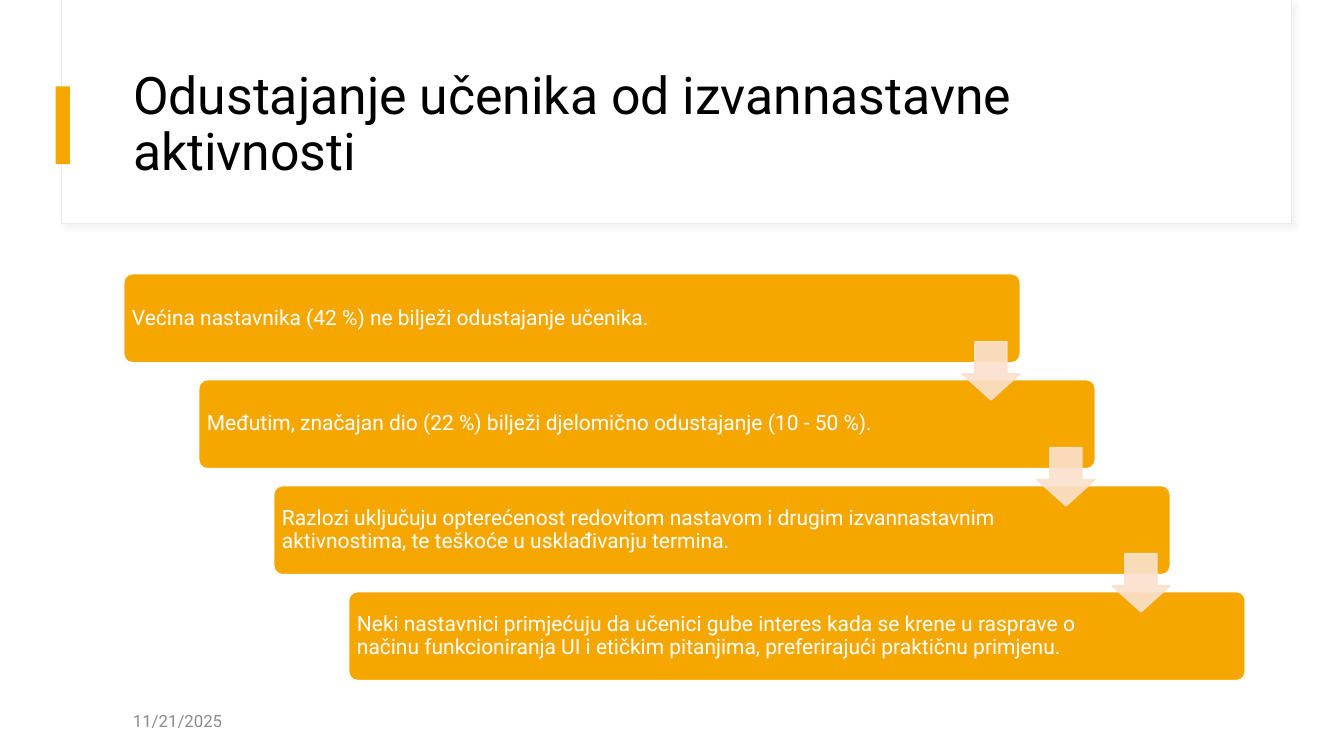
import pptx
import pptx.util
import pptx.dml.color
import pptx.enum.shapes
import pptx.enum.text
import pptx.oxml
import pptx.oxml.ns

Cm = pptx.util.Cm
Pt = pptx.util.Pt
SHAPES = pptx.enum.shapes.MSO_SHAPE
MIDDLE = pptx.enum.text.MSO_ANCHOR.MIDDLE
LEFT = pptx.enum.text.PP_ALIGN.LEFT
NAMESPACE = pptx.oxml.ns.nsdecls("a")
FONT = "Roboto"
COLORS = {
    "white": "FFFFFF",
    "black": "000000",
    "orange": "F5A700",
    "peach": "FBE1CC",
    "border": "E9E9E9",
    "shadow": "D9D9D9",
    "date": "8C8C8C",
}


def add_filled_shape(kind, left, top, width, height, fill, line=None, line_width=1):
    shape = slide.shapes.add_shape(kind, Cm(left), Cm(top), Cm(width), Cm(height))
    shape.shadow.inherit = False
    shape.fill.solid()
    shape.fill.fore_color.rgb = pptx.dml.color.RGBColor.from_string(COLORS[fill])
    if line:
        shape.line.color.rgb = pptx.dml.color.RGBColor.from_string(COLORS[line])
        shape.line.width = Pt(line_width)
    else:
        shape.line.fill.background()
    return shape


def write_text(shape, text, size, color, spacing=1.0):
    frame = shape.text_frame
    frame.word_wrap = True
    frame.auto_size = pptx.enum.text.MSO_AUTO_SIZE.NONE
    frame.vertical_anchor = MIDDLE
    frame.text = text
    paragraph = frame.paragraphs[0]
    paragraph.alignment = LEFT
    paragraph.line_spacing = spacing
    paragraph.font.name = FONT
    paragraph.font.size = Pt(size)
    paragraph.font.color.rgb = pptx.dml.color.RGBColor.from_string(COLORS[color])


presentation = pptx.Presentation()
presentation.slide_width = Cm(33.87)
presentation.slide_height = Cm(19.05)
slide = presentation.slides.add_slide(presentation.slide_layouts[5])

# Header card with a soft shadow, and its accent bar
card = add_filled_shape(SHAPES.RECTANGLE, 1.56, 0, 31, 5.63, "white", "border", 0.75)
effects = card._element.spPr.find(pptx.oxml.ns.qn("a:effectLst"))
effects.append(pptx.oxml.parse_xml(
    f'<a:outerShdw {NAMESPACE} blurRad="50800" dist="38100" dir="2700000">'
    f'<a:srgbClr val="{COLORS["shadow"]}"><a:alpha val="30000"/></a:srgbClr>'
    "</a:outerShdw>"))
add_filled_shape(SHAPES.RECTANGLE, 1.4, 2.18, 0.36, 1.96, "orange")

# Title, brought in front of the card
title = slide.shapes.title
title.left, title.top, title.width, title.height = Cm(3.1), Cm(1.52), Cm(28.24), Cm(3.28)
write_text(title, "Odustajanje učenika od izvannastavne aktivnosti", 37, "black", 0.9)
slide.shapes._spTree.append(title._element)

# Date
date = slide.shapes.add_textbox(Cm(3.1), Cm(17.65), Cm(7.62), Cm(1.02))
write_text(date, "11/21/2025", 12, "date")

# Staircase of findings
findings = [
    "Većina nastavnika (42 %) ne bilježi odustajanje učenika.",
    "Međutim, značajan dio (22 %) bilježi djelomično odustajanje (10 - 50 %).",
    "Razlozi uključuju opterećenost redovitom nastavom i drugim izvannastavnim "
    "aktivnostima, te teškoće u usklađivanju termina.",
    "Neki nastavnici primjećuju da učenici gube interes kada se krene u rasprave o "
    "načinu funkcioniranja UI i etičkim pitanjima, preferirajući praktičnu primjenu.",
]
STEP_X, STEP_Y = 1.89, 2.67
for index, finding in enumerate(findings):
    box = add_filled_shape(SHAPES.ROUNDED_RECTANGLE, 3.11 + index * STEP_X,
                           6.89 + index * STEP_Y, 22.61, 2.26, "orange", "white", 1.5)
    box.adjustments[0] = 0.1
    write_text(box, finding, 15, "white", 0.9)
    frame = box.text_frame
    frame.margin_left, frame.margin_right = Cm(0.15), Cm(3.55)
    frame.margin_top = frame.margin_bottom = Cm(0.15)

# Translucent arrows between the steps
for index in range(len(findings) - 1):
    arrow = add_filled_shape(SHAPES.DOWN_ARROW, 24.24 + index * STEP_X,
                             8.61 + index * STEP_Y, 1.47, 1.47, "peach", "peach")
    arrow.adjustments[0] = 0.55
    arrow.adjustments[1] = 0.45
    for color in arrow._element.spPr.iter(pptx.oxml.ns.qn("a:srgbClr")):
        color.append(pptx.oxml.parse_xml(f'<a:alpha {NAMESPACE} val="90000"/>'))

presentation.save("out.pptx")
